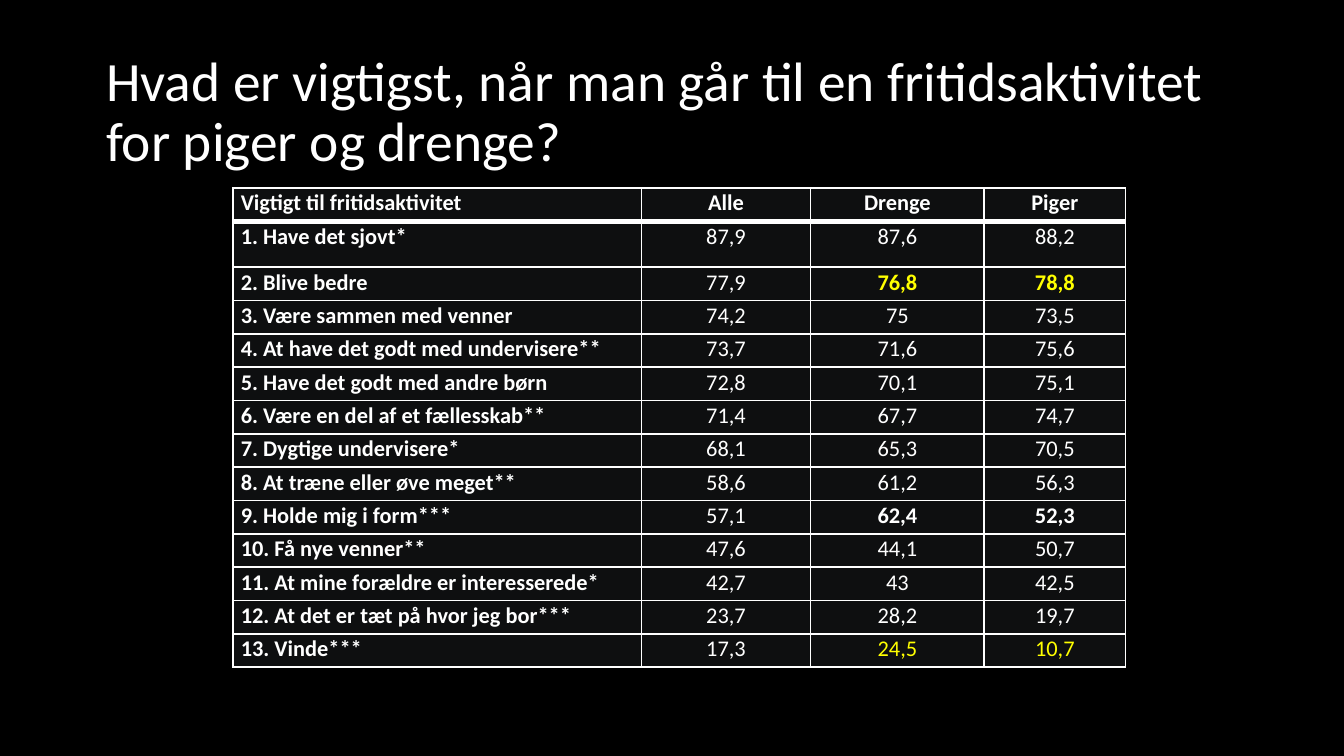
from lxml.etree import SubElement
from pptx import Presentation
from pptx.dml.color import RGBColor
from pptx.enum.text import MSO_ANCHOR, PP_ALIGN
from pptx.oxml import parse_xml
from pptx.oxml.ns import nsdecls, qn
from pptx.util import Cm, Pt

TITLE = "Hvad er vigtigst, når man går til en fritidsaktivitet for piger og drenge?"
ROWS = [
    ("Vigtigt til fritidsaktivitet", "Alle", "Drenge", "Piger"),
    ("1. Have det sjovt*", "87,9", "87,6", "88,2"),
    ("2. Blive bedre", "77,9", "76,8", "78,8"),
    ("3. Være sammen med venner", "74,2", "75", "73,5"),
    ("4. At have det godt med undervisere**", "73,7", "71,6", "75,6"),
    ("5. Have det godt med andre børn", "72,8", "70,1", "75,1"),
    ("6. Være en del af et fællesskab**", "71,4", "67,7", "74,7"),
    ("7. Dygtige undervisere*", "68,1", "65,3", "70,5"),
    ("8. At træne eller øve meget**", "58,6", "61,2", "56,3"),
    ("9. Holde mig i form***", "57,1", "62,4", "52,3"),
    ("10. Få nye venner**", "47,6", "44,1", "50,7"),
    ("11. At mine forældre er interesserede*", "42,7", "43", "42,5"),
    ("12. At det er tæt på hvor jeg bor***", "23,7", "28,2", "19,7"),
    ("13. Vinde***", "17,3", "24,5", "10,7"),
]
COL_WIDTHS = [7.72, 3.2, 3.28, 2.67]
ROW_HEIGHT, TALL_ROW, TALL_HEIGHT = 0.63, 1, 0.87
BOLD_ROWS = {2, 9}
YELLOW_ROWS = {2, 13}
WHITE, YELLOW, BLACK, TINT = "FFFFFF", "FFFF00", "000000", "CFD5EA"


def rgb(value):
    return RGBColor.from_string(value)


def fill_solid(target, color):
    target.fill.solid()
    target.fill.fore_color.rgb = rgb(color)


def write(p, text, size, color=WHITE, bold=False):
    r = p.add_run()
    r.text = text
    for name, value in {"name": "Calibri", "size": Pt(size), "bold": bold}.items():
        setattr(r.font, name, value)
    r.font.color.rgb = rgb(color)


def border(side, points):
    return parse_xml(
        f'<a:{side} {nsdecls("a")} w="{Pt(points)}"><a:solidFill>'
        f'<a:srgbClr val="{WHITE}"/></a:solidFill></a:{side}>'
    )


def style_cell(cell, widths):
    for side in ("left", "right"):
        setattr(cell, f"margin_{side}", Cm(0.15))
    for side in ("top", "bottom"):
        setattr(cell, f"margin_{side}", 0)
    fill_solid(cell, TINT)
    tc_pr = cell._tc.get_or_add_tcPr()
    SubElement(next(tc_pr.iter(qn("a:srgbClr"))), qn("a:alpha"), val="7000")
    for i, (side, points) in enumerate(widths.items()):
        tc_pr.insert(i, border(side, points))


prs = Presentation()
prs.slide_width, prs.slide_height = Cm(25.4), Cm(14.29)
s = prs.slides.add_slide(prs.slide_layouts[5])
fill_solid(s.background, BLACK)

title = s.shapes.title
title.left, title.top, title.width, title.height = Cm(1.75), Cm(0.76), Cm(21.9), Cm(2.76)
tf = title.text_frame
tf.word_wrap = True
tf.vertical_anchor = MSO_ANCHOR.MIDDLE
p = tf.paragraphs[0]
p.alignment, p.line_spacing = PP_ALIGN.LEFT, 0.9
write(p, TITLE, 29.7)

heights = [TALL_HEIGHT if i == TALL_ROW else ROW_HEIGHT for i in range(len(ROWS))]
table = s.shapes.add_table(
    len(ROWS), len(COL_WIDTHS), Cm(4.4), Cm(3.55), Cm(sum(COL_WIDTHS)), Cm(sum(heights))
).table
table.first_row = table.horz_banding = False
for column, width in zip(table.columns, COL_WIDTHS):
    column.width = Cm(width)
for row, height in zip(table.rows, heights):
    row.height = Cm(height)

for i, values in enumerate(ROWS):
    for j, text in enumerate(values):
        cell = table.cell(i, j)
        style_cell(cell, {"lnL": 1, "lnR": 1, "lnT": 3 if i == 1 else 1, "lnB": 3 if i == 0 else 1})
        by_gender = j >= 2
        p = cell.text_frame.paragraphs[0]
        p.alignment = PP_ALIGN.CENTER if j else PP_ALIGN.LEFT
        p.line_spacing = 1.07
        color = YELLOW if by_gender and i in YELLOW_ROWS else WHITE
        write(p, text, 12, color, i == 0 or j == 0 or (by_gender and i in BOLD_ROWS))

prs.save("out.pptx")
